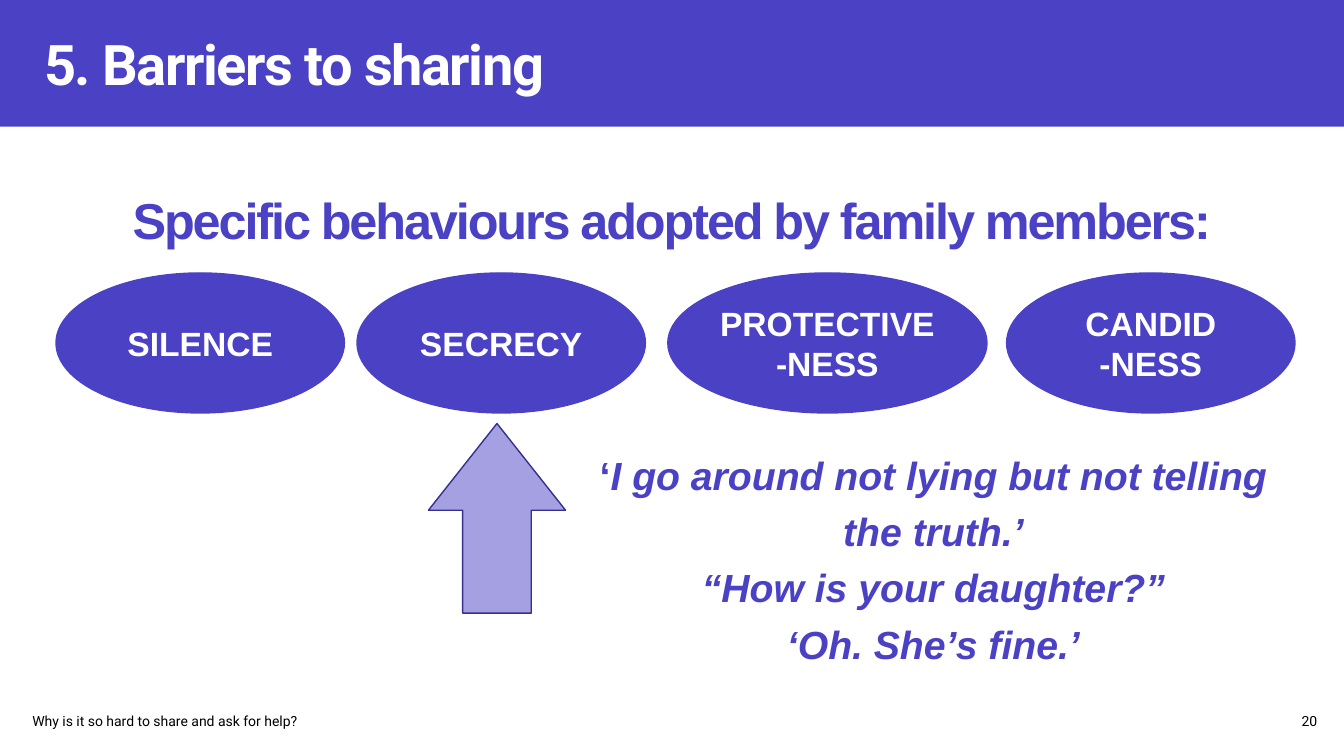
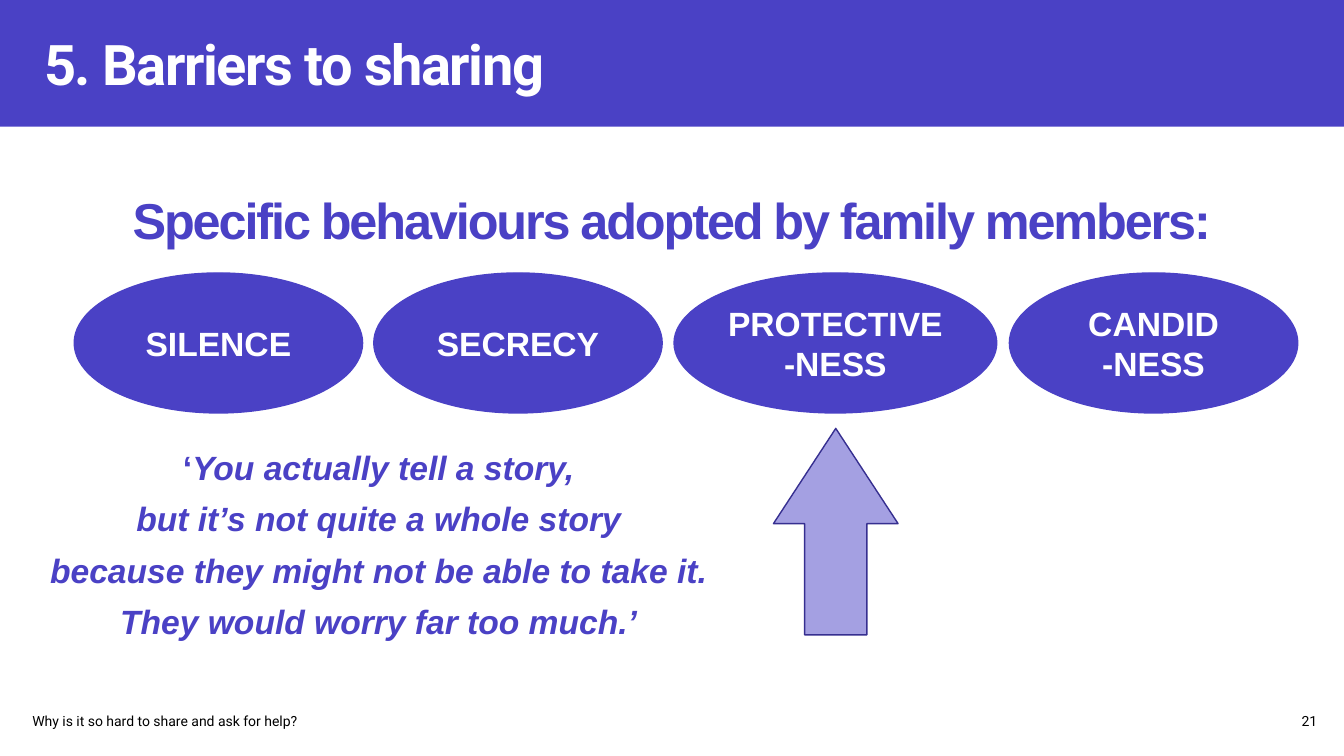
import lxml.etree
import pptx
import pptx.util
import pptx.dml.color
import pptx.enum.shapes
import pptx.enum.text
import pptx.oxml.ns

Pt = pptx.util.Pt
SHAPE = pptx.enum.shapes.MSO_SHAPE
ALIGN = pptx.enum.text.PP_ALIGN
ANCHOR = pptx.enum.text.MSO_ANCHOR
qn = pptx.oxml.ns.qn

INDIGO = "4A41C5"
LILAC = "A4A0E2"
NAVY = "362F90"
WHITE = "FFFFFF"
BLACK = "000000"
BEHAVIOURS = ["SILENCE", "SECRECY", "PROTECTIVE\n-NESS", "CANDID\n-NESS"]


def rgb(value):
    return pptx.dml.color.RGBColor.from_string(value)


def place(sp, left, top, width, height):
    sp.left, sp.top, sp.width, sp.height = Pt(left), Pt(top), Pt(width), Pt(height)


def format_frame(tf, anchor=ANCHOR.MIDDLE, wrap=True):
    tf.word_wrap = wrap
    tf.auto_size = pptx.enum.text.MSO_AUTO_SIZE.NONE
    tf.vertical_anchor = anchor
    tf.margin_left = tf.margin_right = tf.margin_top = tf.margin_bottom = Pt(3.6)


def format_text(tf, size, color, font="Arial", align=ALIGN.CENTER, bold=True,
                italic=False, spacing=0):
    for p in tf.paragraphs:
        p.alignment = align
        for r in p.runs:
            r.font.size = Pt(size)
            r.font.name = font
            r.font.bold = bold
            r.font.italic = italic
            r.font.color.rgb = rgb(color)
            if spacing:
                r.font._element.set("spc", str(int(spacing * 100)))


def add_filled(slide, kind, box, fill, line):
    sp = slide.shapes.add_shape(kind, *map(Pt, box))
    sp.shadow.inherit = False
    sp.fill.solid()
    sp.fill.fore_color.rgb = rgb(fill)
    sp.line.color.rgb = rgb(line)
    sp.line.width = Pt(1)
    return sp


def add_text(slide, box, text, anchor=ANCHOR.MIDDLE, wrap=True):
    tf = slide.shapes.add_textbox(*map(Pt, box)).text_frame
    format_frame(tf, anchor, wrap)
    tf.text = text
    return tf


def add_ellipses(slide, lefts, widths):
    for label, left, width in zip(BEHAVIOURS, lefts, widths):
        sp = add_filled(slide, SHAPE.OVAL, (left, 195, width, 100), INDIGO, INDIGO)
        format_frame(sp.text_frame)
        sp.text_frame.text = label
        format_text(sp.text_frame, 24, WHITE)


def add_up_arrow(slide, box, head):
    sp = add_filled(slide, SHAPE.UP_ARROW, box, LILAC, NAVY)
    sp.adjustments[0] = 0.5
    sp.adjustments[1] = head / min(box[2:])


def add_quote(slide, box, text, size, anchor, line_spacing, gap):
    tf = add_text(slide, box, text, anchor)
    first = tf.paragraphs[0]
    opening = first.runs[0]
    first.add_run().text = opening.text[1:]
    opening.text = opening.text[0]
    format_text(tf, size, INDIGO, italic=True)
    opening.font.italic = False
    for i, p in enumerate(tf.paragraphs):
        p.line_spacing = line_spacing
        p.space_before = Pt(gap if i else 0)


def add_footer(slide, number):
    tf = add_text(slide, (19.5, 505.5, 374, 19.5),
                  "Why is it so hard to share and ask for help?")
    format_text(tf, 10, BLACK, "Roboto", ALIGN.LEFT, bold=False)
    tf = add_text(slide, (925, 505.5, 19.5, 19.5), str(number), wrap=False)
    format_text(tf, 10, BLACK, "Roboto", ALIGN.RIGHT, bold=False)
    field = tf.paragraphs[0].runs[0]._r
    field.tag = qn("a:fld")
    field.set("id", "{B6F15528-21DE-4FAA-801E-634DDDAF4B2B}")
    field.set("type", "slidenum")


def add_slide(prs, layout, number):
    slide = prs.slides.add_slide(layout)
    title, body = slide.placeholders
    title.text_frame.text = "5. Barriers to sharing"
    format_frame(title.text_frame)
    format_text(title.text_frame, 40, WHITE, "Roboto", ALIGN.LEFT, spacing=-1)
    tf = body.text_frame
    tf.text = "Specific behaviours adopted by family members:"
    format_frame(tf, ANCHOR.TOP)
    p = tf.paragraphs[0]
    p.line_spacing = 1.1
    p.space_before = Pt(0)
    pPr = p._p.get_or_add_pPr()
    pPr.set("marL", "0")
    pPr.set("indent", "0")
    lxml.etree.SubElement(pPr, qn("a:buNone"))
    format_text(tf, 36, INDIGO, spacing=-1.5)
    add_footer(slide, number)
    return slide


def style_layout(prs, layout):
    title, body = list(layout.placeholders)[:2]
    place(title, 28, 15, 899, 60)
    place(body, 51, 127, 858, 56)
    slide = prs.slides[0]
    band = add_filled(slide, SHAPE.RECTANGLE, (0, 0, 960, 90.5), INDIGO, INDIGO)
    band.line.fill.background()
    layout.shapes._spTree.insert(2, band._element)


def main():
    prs = pptx.Presentation()
    prs.slide_width, prs.slide_height = Pt(960), Pt(540)
    prs.element.set("firstSlideNum", "20")
    layout = prs.slide_layouts[1]

    slide = add_slide(prs, layout, 20)
    style_layout(prs, layout)
    add_up_arrow(slide, (306, 302.5, 98, 135.5), 62)
    add_quote(slide, (414, 319.5, 505.5, 153),
              "‘I go around not lying but not telling the truth.’\n"
              "“How is your daughter?”\n‘Oh. She’s fine.’",
              28, ANCHOR.MIDDLE, 1.2, 0)
    add_ellipses(slide, (40, 255, 477, 719), (206, 206, 228, 206))

    slide = add_slide(prs, layout, 21)
    add_quote(slide, (19.5, 315.5, 502, 147.5),
              "‘You actually tell a story,\nbut it’s not quite a whole story\n"
              "because they might not be able to take it.\n"
              "They would worry far too much.’",
              24, ANCHOR.TOP, 1.0, 8)
    add_ellipses(slide, (53, 267, 481.5, 721), (206, 206, 230.5, 206))
    add_up_arrow(slide, (552.5, 306, 89, 147.5), 68)

    prs.save("out.pptx")


if __name__ == "__main__":
    main()
